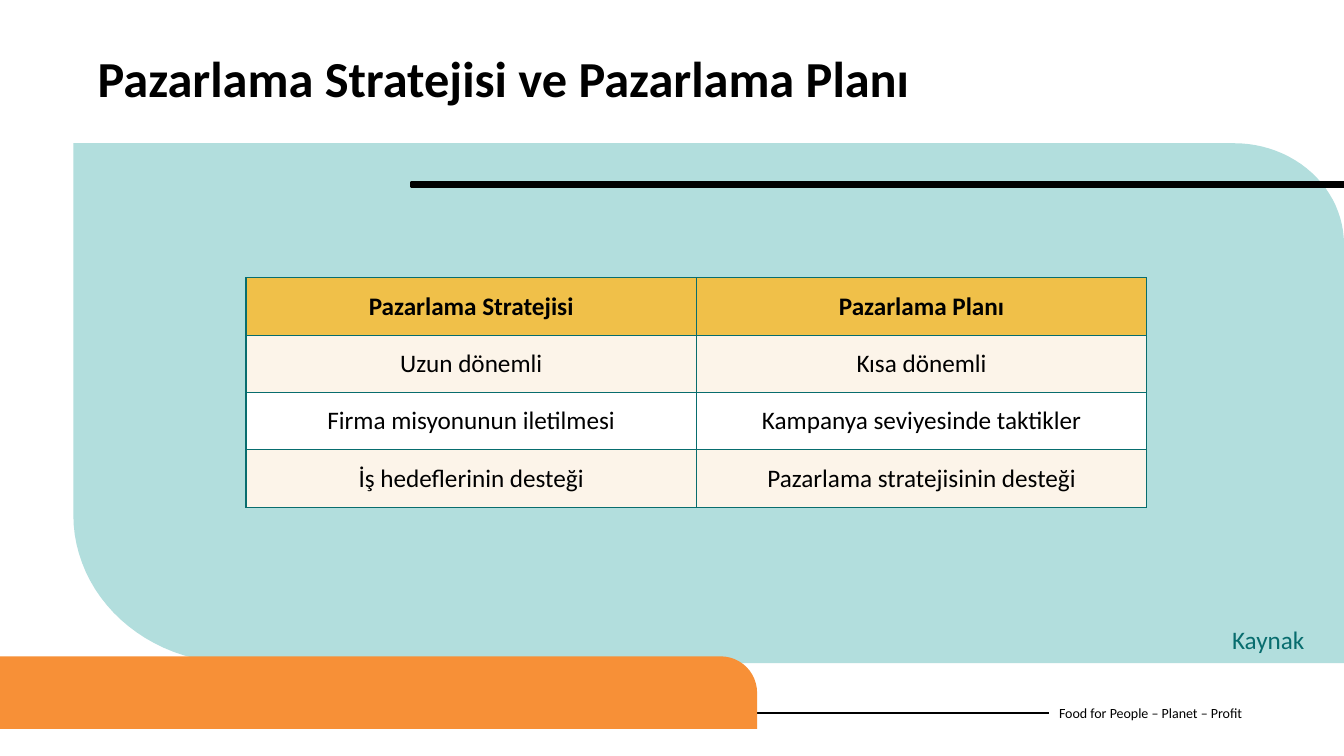
from math import cos, pi, sin

from lxml import etree
from pptx import Presentation
from pptx import util as u
from pptx.dml.color import RGBColor
from pptx.enum import shapes, text
from pptx.oxml import ns

BLACK = RGBColor(0x00, 0x00, 0x00)
WHITE = RGBColor(0xFF, 0xFF, 0xFF)
AQUA = RGBColor(0xB2, 0xDE, 0xDD)
TEAL = RGBColor(0x08, 0x6D, 0x6E)
ORANGE = RGBColor(0xF7, 0x90, 0x37)
GOLD = RGBColor(0xF0, 0xC0, 0x49)
CREAM = RGBColor(0xFC, 0xF4, 0xE9)
WIDE, HIGH = 33.87, 19.05
ROWS = [
    ("Pazarlama Stratejisi", "Pazarlama Planı"),
    ("Uzun dönemli", "Kısa dönemli"),
    ("Firma misyonunun iletilmesi", "Kampanya seviyesinde taktikler"),
    ("İş hedeflerinin desteği", "Pazarlama stratejisinin desteği"),
]


def arc(x, y, rx, ry, start):
    """Return points of a clockwise quarter ellipse around x, y."""
    steps = 24
    turns = [start + pi / 2 * i / steps for i in range(steps + 1)]
    return [(x + rx * cos(t), y + ry * sin(t)) for t in turns]


class Page:
    """Hold the style and the current slide."""

    font = "Calibri"

    def __init__(self, slide):
        self.slide = slide
        self.shapes = slide.shapes

    def run(self, par, words, size, color=BLACK, bold=False):
        run = par.add_run()
        run.text = words
        font = run.font
        font.name, font.size, font.bold = self.font, u.Pt(size), bold
        font.color.rgb = color

    def label(self, box, words, size, color=BLACK, bold=False, mid=False, gap=1.0):
        frame = self.shapes.add_textbox(*map(u.Cm, box)).text_frame
        frame.word_wrap = True
        frame.vertical_anchor = text.MSO_ANCHOR.MIDDLE if mid else text.MSO_ANCHOR.TOP
        par = frame.paragraphs[0]
        par.line_spacing = gap
        self.run(par, words, size, color, bold)

    def paint(self, shape, color, edge=0):
        shape.shadow.inherit = False
        shape.fill.solid()
        shape.fill.fore_color.rgb = color
        if edge:
            shape.line.color.rgb = color
            shape.line.width = u.Pt(edge)
        else:
            shape.line.fill.background()

    def block(self, kind, box, color, edge=0):
        shape = self.shapes.add_shape(kind, *map(u.Cm, box))
        self.paint(shape, color, edge)
        return shape

    def outline(self, points, color):
        spots = [(u.Cm(x), u.Cm(y)) for x, y in points]
        form = self.shapes.build_freeform(*spots[0])
        form.add_line_segments(spots[1:], close=True)
        self.paint(form.convert_to_shape(), color)

    def line(self, start, end, width):
        line = self.shapes.add_connector(
            shapes.MSO_CONNECTOR.STRAIGHT, *map(u.Cm, start + end))
        line.line.color.rgb = BLACK
        line.line.width = u.Pt(width)
        etree.SubElement(line._element.spPr, ns.qn("a:effectLst"))

    def border(self, cell, color, width):
        props = cell._tc.get_or_add_tcPr()
        for i, side in enumerate(("lnL", "lnR", "lnT", "lnB")):
            edge = etree.Element(ns.qn("a:" + side), w=str(u.Pt(width)))
            fill = etree.SubElement(edge, ns.qn("a:solidFill"))
            etree.SubElement(fill, ns.qn("a:srgbClr"), val=str(color))
            props.insert(i, edge)

    def table(self, box, rows, size):
        grid = self.shapes.add_table(
            len(rows), len(rows[0]), *map(u.Cm, box)).table
        for r, row in enumerate(rows):
            for c, words in enumerate(row):
                cell = grid.cell(r, c)
                cell.fill.solid()
                cell.fill.fore_color.rgb = (
                    GOLD if r == 0 else CREAM if r % 2 else WHITE)
                cell.vertical_anchor = text.MSO_ANCHOR.MIDDLE
                par = cell.text_frame.paragraphs[0]
                par.alignment = text.PP_ALIGN.CENTER
                self.run(par, words, size, bold=r == 0)
                self.border(cell, TEAL, 1)


def main():
    deck = Presentation()
    deck.slide_width, deck.slide_height = u.Cm(WIDE), u.Cm(HIGH)
    page = Page(deck.slides.add_slide(deck.slide_layouts[6]))
    kinds = shapes.MSO_SHAPE

    page.label((26.44, 17.45, 6.93, 1.02), "Food for People – Planet – Profit",
               10, mid=True)
    page.line((0, 17.96), (26.44, 17.96), 1.5)

    left, top, base = 1.85, 3.61, 16.71
    panel = [(left, top)]
    panel += arc(WIDE - 2.77, top + 2.54, 2.77, 2.54, -pi / 2)
    panel += [(WIDE, base)]
    panel += arc(left + 4.09, base - 3.73, 4.09, 3.73, pi / 2)
    page.outline(panel, AQUA)

    band = page.block(kinds.ROUND_1_RECTANGLE, (0, 16.54, 19.08, 1.83), ORANGE)
    band.adjustments[0] = 0.5
    page.block(kinds.RECTANGLE, (10.36, 4.6, WIDE - 10.36, 0.1), BLACK, 1.93)

    page.label((2.21, 1.24, 29.44, 2.24), "Pazarlama Stratejisi ve Pazarlama Planı",
               36, bold=True, gap=0.9)
    page.label((30.8, 15.6, WIDE - 30.8, 1.02), "Kaynak", 18, TEAL)
    page.table((6.2, 7.0, 22.7, 5.78), ROWS, 18)
    deck.save("out.pptx")


if __name__ == "__main__":
    main()
